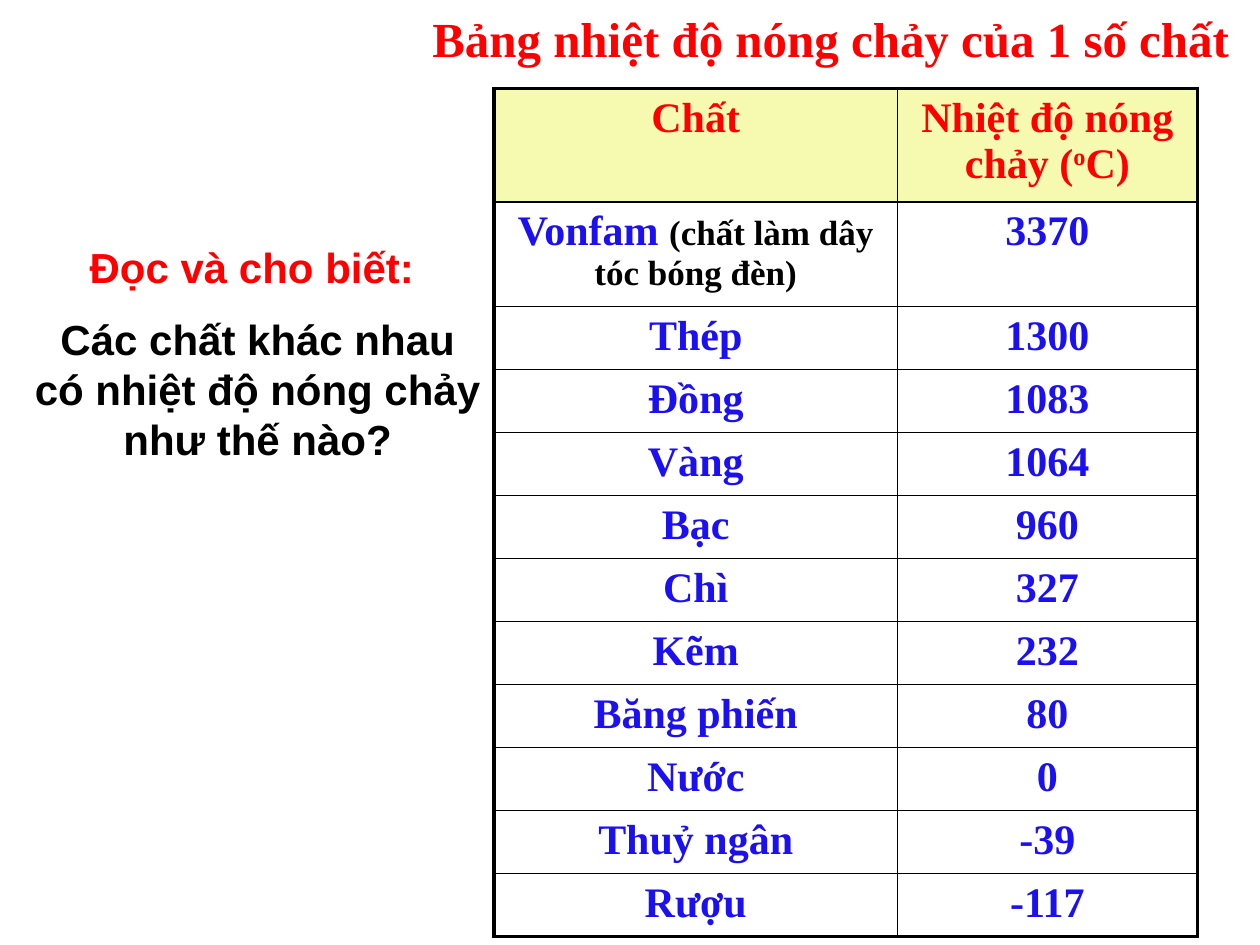
from lxml.etree import SubElement
from pptx import Presentation
from pptx.dml.color import RGBColor
from pptx.enum.text import MSO_ANCHOR, MSO_AUTO_SIZE, PP_ALIGN
from pptx.oxml.ns import qn
from pptx.util import Cm, Pt

COLORS = {"red": "FF0000", "blue": "1B10F0", "black": "000000", "cream": "F5FAB0"}
SERIF, SANS = "Times New Roman", "Arial"
THIN, THICK = Pt(1), Pt(2.25)

TITLE = "Bảng nhiệt độ nóng chảy của 1 số chất"
PROMPT = "Đọc và cho biết: "
QUERY = "Các chất khác nhau có nhiệt độ nóng chảy như thế nào?"
POINTS = [
    ("Vonfam ", "3370"), ("Thép", "1300"), ("Đồng", "1083"), ("Vàng", "1064"),
    ("Bạc", "960"), ("Chì", "327"), ("Kẽm", "232"), ("Băng phiến", "80"),
    ("Nước", "0"), ("Thuỷ ngân", "-39"), ("Rượu", "-117"),
]
NOTE = "(chất làm dây tóc bóng đèn)"


def write(para, text, size=24, font=SERIF, color="blue", align=PP_ALIGN.CENTER,
          before=0, raised=False):
    """Add a bold run to a paragraph and set the paragraph's format."""
    para.alignment = align
    para.space_before = Pt(before)
    run = para.add_run()
    run.text = text
    run.font.name, run.font.size, run.font.bold = font, Pt(size), True
    run.font.color.rgb = RGBColor.from_string(COLORS[color])
    if raised:
        run._r.get_or_add_rPr().set("baseline", "30000")


def place(shape, box):
    shape.left, shape.top, shape.width, shape.height = (Cm(n) for n in box)


def add_title(slide, box):
    title = slide.shapes.title
    place(title, box)
    frame = title.text_frame
    frame.auto_size = MSO_AUTO_SIZE.NONE
    frame.vertical_anchor = MSO_ANCHOR.TOP
    write(frame.paragraphs[0], TITLE, size=28, color="red", align=PP_ALIGN.LEFT)


def add_query(slide, box):
    frame = slide.shapes.add_textbox(*(Cm(n) for n in box)).text_frame
    frame.word_wrap = True
    write(frame.paragraphs[0], PROMPT, font=SANS, color="red")
    write(frame.add_paragraph(), QUERY, font=SANS, color="black", before=12)


def set_edges(cell, widths):
    """Draw the left, right, top and bottom borders, in that order."""
    props = cell._tc.get_or_add_tcPr()
    for i, (side, width) in enumerate(zip("LRTB", widths)):
        line = SubElement(props, qn(f"a:ln{side}"), w=str(width))
        fill = SubElement(line, qn("a:solidFill"))
        SubElement(fill, qn("a:srgbClr"), val=COLORS["black"])
        props.insert(i, line)


def add_points(slide, box):
    """Place the table of melting points; the plain rows share what is left."""
    count = len(POINTS) + 1
    table = slide.shapes.add_table(count, 2, *(Cm(n) for n in box)).table
    table.first_row = table.horz_banding = False
    left, head, first = 8.13, 2.29, 2.11
    plain = (box[3] - head - first) / (count - 2)
    for col, width in zip(table.columns, (left, box[2] - left)):
        col.width = Cm(width)
    for row, height in zip(table.rows, [head, first] + [plain] * (count - 2)):
        row.height = Cm(height)

    write(table.cell(0, 0).text_frame.paragraphs[0], "Chất", color="red")
    unit = table.cell(0, 1).text_frame.paragraphs[0]
    write(unit, "Nhiệt độ nóng chảy (", color="red")
    write(unit, "o", color="red", raised=True)
    write(unit, "C)", color="red")
    for r, pair in enumerate(POINTS, 1):
        for c, text in enumerate(pair):
            write(table.cell(r, c).text_frame.paragraphs[0], text)
    write(table.cell(1, 0).text_frame.paragraphs[0], NOTE, size=20, color="black")

    for r in range(count):
        for c in range(2):
            cell = table.cell(r, c)
            if r == 0:
                cell.fill.solid()
                cell.fill.fore_color.rgb = RGBColor.from_string(COLORS["cream"])
            else:
                cell.fill.background()
            outer = (c == 0, c == 1, r == 0, r == count - 1)
            set_edges(cell, [THICK if edge else THIN for edge in outer])


def main():
    deck = Presentation()
    deck.slide_width, deck.slide_height = Cm(25.4), Cm(19.05)
    slide = deck.slides.add_slide(deck.slide_layouts[5])
    add_points(slide, (9.96, 1.78, 14.18, 17.1))
    add_title(slide, (8.46, 0.05, 17.15, 1.45))
    add_query(slide, (0.43, 4.75, 9.53, 4.83))
    deck.save("out.pptx")


if __name__ == "__main__":
    main()
